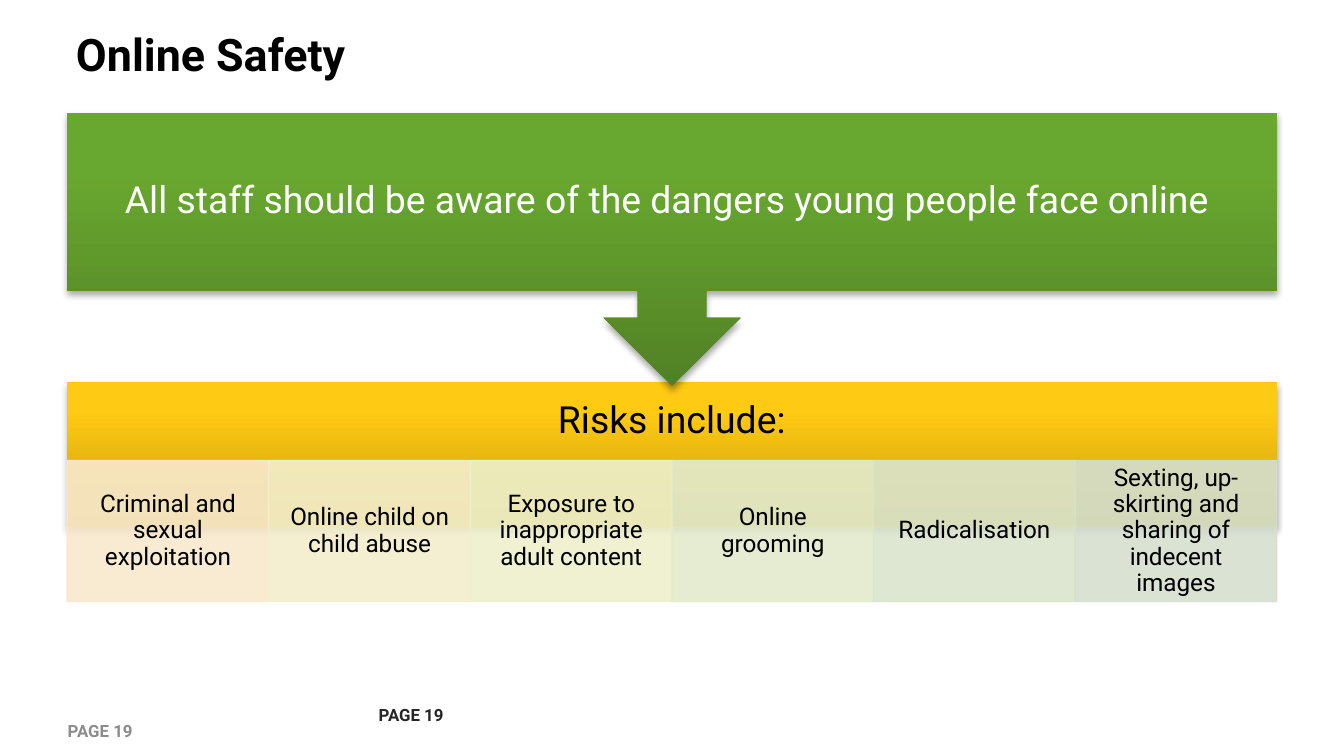
from dataclasses import dataclass

from lxml import etree
from pptx import Presentation
from pptx.dml.color import RGBColor
from pptx.enum.shapes import MSO_SHAPE
from pptx.enum.text import MSO_ANCHOR, MSO_AUTO_SIZE, PP_ALIGN
from pptx.oxml.ns import qn
from pptx.util import Pt

RECT = MSO_SHAPE.RECTANGLE
CALLOUT = MSO_SHAPE.UP_ARROW_CALLOUT
LEFT, CENTER = PP_ALIGN.LEFT, PP_ALIGN.CENTER
MIDDLE = MSO_ANCHOR.MIDDLE
NO_AUTOFIT = MSO_AUTO_SIZE.NONE
TITLE_ONLY = 5


@dataclass(frozen=True)
class Theme:
    font: str = "Roboto"
    title_size: float = 24
    band_size: float = 20
    risk_size: float = 13
    page_size: float = 9
    black: str = "000000"
    white: str = "FFFFFF"
    page_dark: str = "262626"
    page_grey: str = "8C8C8C"
    # Gradient stops run from the bottom edge to the top
    green: tuple = ((0, "518125"), (80, "69A830"), (100, "69AB2E"))
    yellow: tuple = ((0, "C69D0D"), (80, "FFCA13"), (100, "FFCA14"))
    risks: tuple = ("F8E9CD", "F4EECD", "EEF0CC", "E3EBCD", "DBE5CD", "D5DFCF")
    risk_opacity: int = 90


def add_color(parent, color, opacity=100):
    node = etree.SubElement(parent, qn("a:srgbClr"), val=color)
    if opacity < 100:
        etree.SubElement(node, qn("a:alpha"), val=str(opacity * 1000))


class SlideBuilder:
    def __init__(self, slide, theme):
        self.slide = slide
        self.theme = theme

    def set_text(self, shape, text, size, color, bold=False, align=LEFT,
                 insets=(7.2, 3.6), line_spacing=None, space_after=None):
        frame = shape.text_frame
        frame.word_wrap = True
        frame.auto_size = NO_AUTOFIT
        frame.vertical_anchor = MIDDLE
        frame.margin_left = frame.margin_right = Pt(insets[0])
        frame.margin_top = frame.margin_bottom = Pt(insets[1])
        paragraph = frame.paragraphs[0]
        paragraph.alignment = align
        if line_spacing is not None:
            paragraph.line_spacing = line_spacing
        if space_after is not None:
            paragraph.space_after = Pt(space_after)
        run = paragraph.add_run()
        run.text = text
        run.font.name = self.theme.font
        run.font.size = Pt(size)
        run.font.bold = bold
        run.font.color.rgb = RGBColor.from_string(color)

    def title(self, box, text):
        title = self.slide.shapes.title
        title.left, title.top, title.width, title.height = map(Pt, box)
        self.set_text(title, text, self.theme.title_size, self.theme.black, bold=True)

    def text(self, box, text, size, color, **style):
        self.set_text(self.slide.shapes.add_textbox(*map(Pt, box)), text, size, color, **style)

    def band(self, kind, box, stops, rotation=0):
        """Gradient shape with a soft shadow below it."""
        shape = self.slide.shapes.add_shape(kind, *map(Pt, box))
        shape.rotation = rotation
        shape.line.fill.background()
        shape.fill.gradient()
        gradient = shape._element.spPr.find(qn("a:gradFill"))
        gradient.set("rotWithShape", "0")
        for child in list(gradient):
            gradient.remove(child)
        stop_list = etree.SubElement(gradient, qn("a:gsLst"))
        for position, color in stops:
            add_color(etree.SubElement(stop_list, qn("a:gs"), pos=str(position * 1000)), color)
        etree.SubElement(gradient, qn("a:lin"), ang=str(270 * 60000), scaled="0")

        shape.shadow.inherit = False
        effects = shape._element.spPr.find(qn("a:effectLst"))
        shadow = etree.SubElement(
            effects, qn("a:outerShdw"), blurRad=str(Pt(3.1)), dist=str(Pt(1.8)),
            dir=str(90 * 60000), rotWithShape="0")
        add_color(shadow, self.theme.black, 35)

    def band_label(self, box, text, color):
        self.text(box, text, self.theme.band_size, color, align=CENTER,
                  insets=(11.2, 11.2), line_spacing=0.9)

    def risk(self, box, text, color):
        shape = self.slide.shapes.add_shape(RECT, *map(Pt, box))
        shape.shadow.inherit = False
        shape.line.width = Pt(0.75)
        for fill in (shape.fill, shape.line.fill):
            fill.solid()
            fill.fore_color.rgb = RGBColor.from_string(color)
        for node in list(shape._element.spPr.iter(qn("a:srgbClr"))):
            etree.SubElement(node, qn("a:alpha"), val=str(self.theme.risk_opacity * 1000))
        self.set_text(shape, text, self.theme.risk_size, self.theme.black, align=CENTER,
                      insets=(7.2, 1.3), line_spacing=0.9)

    def page_label(self, box, color, space_after=None):
        self.text(box, "PAGE 19", self.theme.page_size, color, bold=True,
                  space_after=space_after)


def main():
    theme = Theme()
    deck = Presentation()
    deck.slide_width, deck.slide_height = Pt(720), Pt(405)
    builder = SlideBuilder(deck.slides.add_slide(deck.slide_layouts[TITLE_ONLY]), theme)
    left, width = 36, 648

    # Heading
    builder.title((33.5, -0.7, width, 59), "Online Safety")

    # Risks header
    risks_top = 204.6
    builder.band(RECT, (left, risks_top, width, 78), theme.yellow)
    builder.band_label((left, risks_top, width, 42), "Risks include:", theme.black)

    # Row of risks
    risks = (
        "Criminal and sexual exploitation",
        "Online child on child abuse",
        "Exposure to inappropriate adult content",
        "Online grooming",
        "Radicalisation",
        "Sexting, up-skirting and sharing of indecent images",
    )
    risk_width = width / len(risks)
    for index, (risk, color) in enumerate(zip(risks, theme.risks)):
        builder.risk((left + index * risk_width, 246.7, risk_width, 75.6), risk, color)

    # Staff message pointing down to the risks
    message_top = 60.6
    builder.band(CALLOUT, (left, message_top, width, 146.3), theme.green, rotation=180)
    builder.band_label((left, message_top, width, 95),
                       "All staff should be aware of the dangers young people face online ",
                       theme.white)

    # Page labels
    builder.page_label((195.8, 372.4, 62.6, 21.6), theme.page_dark)
    builder.page_label((29.2, 380.9, 167.8, 21.6), theme.page_grey, space_after=6)

    deck.save("out.pptx")


if __name__ == "__main__":
    main()
